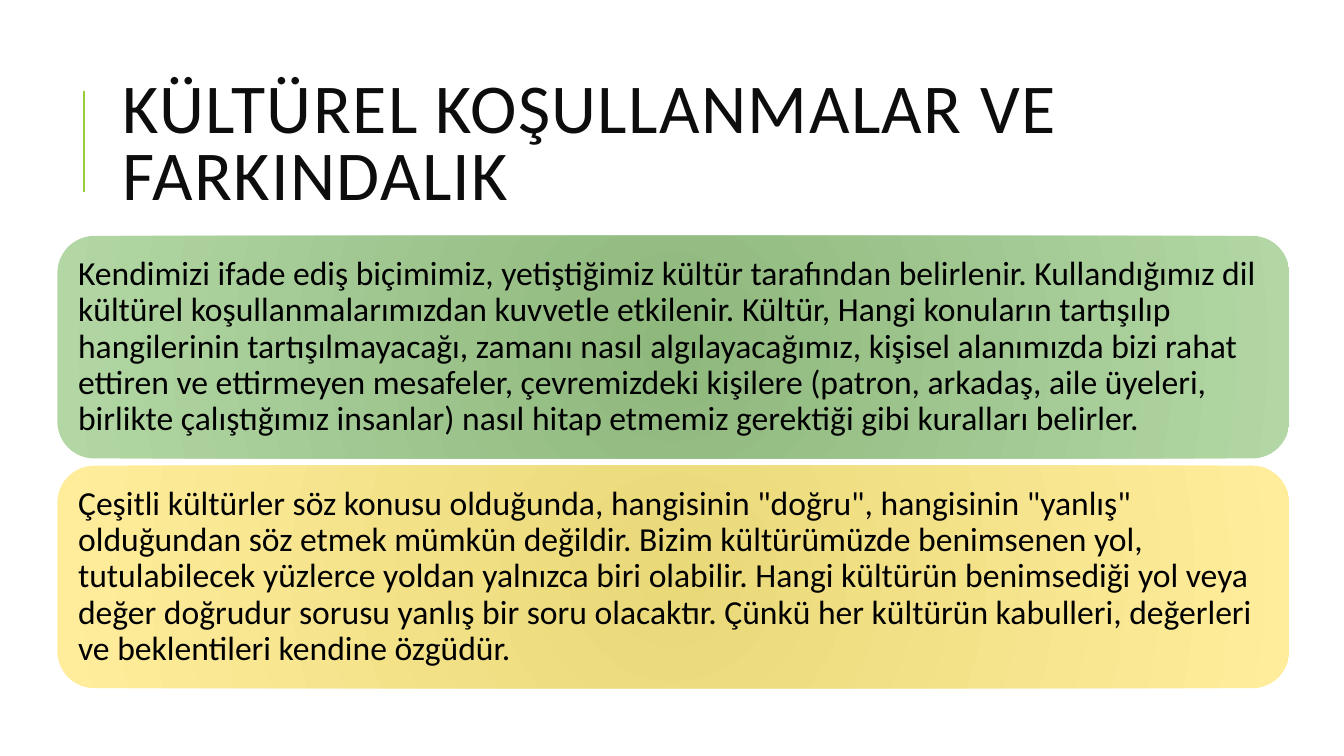
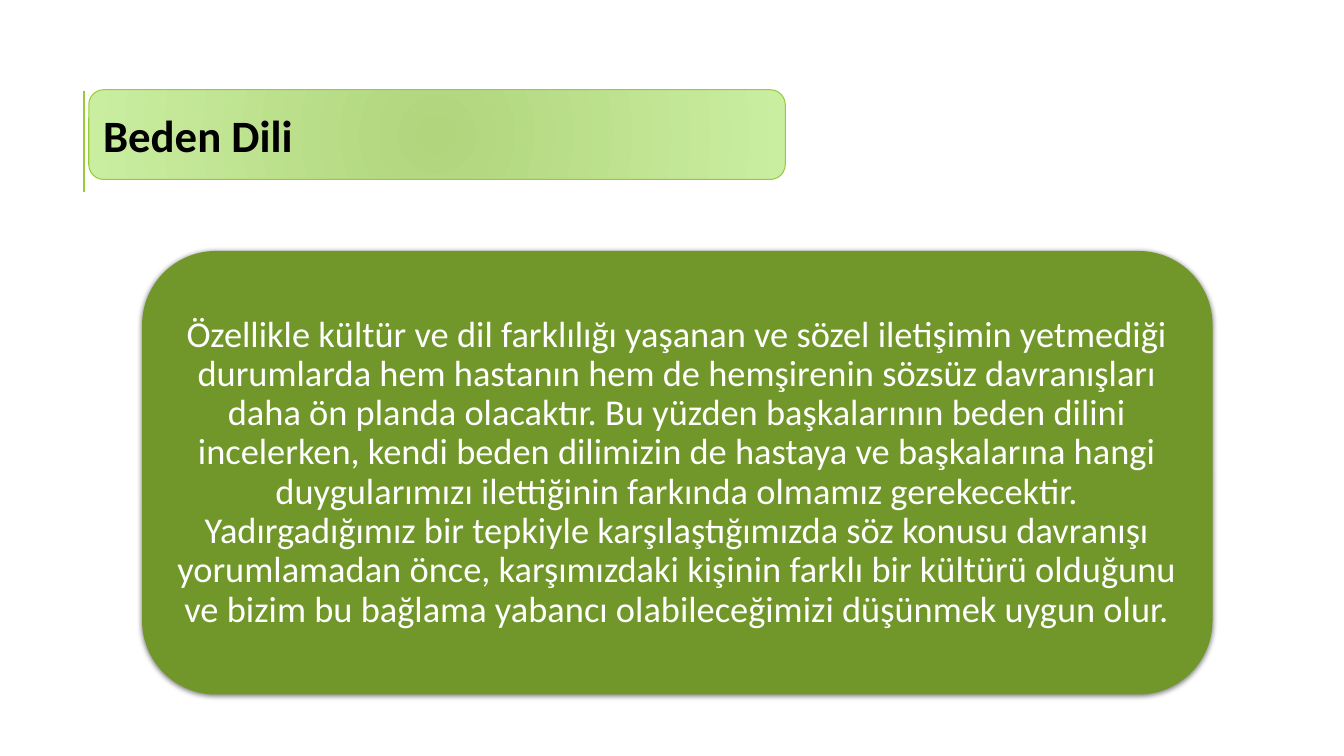
from dataclasses import dataclass
from typing import Optional

from lxml.etree import SubElement
from pptx import Presentation
from pptx.dml.color import RGBColor
from pptx.enum.shapes import MSO_CONNECTOR, MSO_SHAPE
from pptx.enum.text import MSO_ANCHOR, PP_ALIGN
from pptx.oxml.ns import qn
from pptx.slide import Slide
from pptx.text.text import TextFrame
from pptx.util import Pt

FONT = "Calibri"
ACCENT = "99CB38"
TITLE_INK = "0D0D0D"
BLACK = "000000"
WHITE = "FFFFFF"


@dataclass(frozen=True)
class Box:
    left: float
    top: float
    width: float
    height: float

    def lengths(self) -> tuple:
        return Pt(self.left), Pt(self.top), Pt(self.width), Pt(self.height)


@dataclass(frozen=True)
class TextStyle:
    size: float
    color: str
    bold: bool = False
    align: PP_ALIGN = PP_ALIGN.LEFT
    line_spacing: float = 0.9
    letter_spacing: float = 0
    inset_x: float = 7.2
    inset_y: float = 3.6


@dataclass(frozen=True)
class Card:
    box: Box
    text: str
    style: TextStyle
    colors: tuple[str, ...]  # one for a solid fill, two for centre and edge
    outline: Optional[str] = None
    shadow: bool = False


TITLE_BOX = Box(80.6, 46, 765.4, 118)
TITLE_STYLE = TextStyle(50, TITLE_INK, line_spacing=0.8, letter_spacing=1)
CULTURE_STYLE = TextStyle(24, BLACK, inset_y=7.2)
HEADING_STYLE = TextStyle(32, BLACK, bold=True, line_spacing=1)
BODY_STYLE = TextStyle(26, WHITE, align=PP_ALIGN.CENTER, inset_x=7.8)

CULTURE_TOP, CULTURE_HEIGHT, CULTURE_GAP = 168.5, 159, 5.1
CULTURE_CARDS = [
    (
        "Kendimizi ifade ediş biçimimiz, yetiştiğimiz kültür tarafından belirlenir. "
        "Kullandığımız dil kültürel koşullanmalarımızdan kuvvetle etkilenir. Kültür, "
        "Hangi konuların tartışılıp hangilerinin tartışılmayacağı, zamanı nasıl "
        "algılayacağımız, kişisel alanımızda bizi rahat ettiren ve ettirmeyen mesafeler, "
        "çevremizdeki kişilere (patron, arkadaş, aile üyeleri, birlikte çalıştığımız "
        "insanlar) nasıl hitap etmemiz gerektiği gibi kuralları belirler.",
        ("8FB87D", "B2D7A4"),
    ),
    (
        'Çeşitli kültürler söz konusu olduğunda, hangisinin "doğru", hangisinin "yanlış" '
        "olduğundan söz etmek mümkün değildir. Bizim kültürümüzde benimsenen yol, "
        "tutulabilecek yüzlerce yoldan yalnızca biri olabilir. Hangi kültürün benimsediği "
        "yol veya değer doğrudur sorusu yanlış bir soru olacaktır. Çünkü her kültürün "
        "kabulleri, değerleri ve beklentileri kendine özgüdür.",
        ("EAD979", "FFED9C"),
    ),
]

HEADING_CARD = Card(
    Box(63.4, 64.1, 497.5, 64.1), "Beden Dili", HEADING_STYLE,
    ("B0D57D", "CAEEA0"), outline=ACCENT,
)
BODY_CARD = Card(
    Box(101.5, 179.3, 764.6, 316.8),
    "Özellikle kültür ve dil farklılığı yaşanan ve sözel iletişimin yetmediği durumlarda "
    "hem hastanın hem de hemşirenin sözsüz davranışları daha ön planda olacaktır. Bu "
    "yüzden başkalarının beden dilini incelerken, kendi beden dilimizin de hastaya ve "
    "başkalarına hangi duygularımızı ilettiğinin farkında olmamız gerekecektir.\n"
    "Yadırgadığımız bir tepkiyle karşılaştığımızda söz konusu davranışı yorumlamadan önce, "
    "karşımızdaki kişinin farklı bir kültürü olduğunu ve bizim bu bağlama yabancı "
    "olabileceğimizi düşünmek uygun olur.",
    BODY_STYLE, ("719629",), shadow=True,
)


def rgb(color: str) -> RGBColor:
    return RGBColor.from_string(color)


def write_text(frame: TextFrame, text: str, style: TextStyle) -> None:
    frame.word_wrap = True
    frame.vertical_anchor = MSO_ANCHOR.MIDDLE
    frame.margin_left = frame.margin_right = Pt(style.inset_x)
    frame.margin_top = frame.margin_bottom = Pt(style.inset_y)
    paragraph = frame.paragraphs[0]
    paragraph.text = text
    paragraph.alignment = style.align
    paragraph.line_spacing = style.line_spacing
    font = paragraph.font
    font.name, font.size, font.bold = FONT, Pt(style.size), style.bold
    font.color.rgb = rgb(style.color)
    if style.letter_spacing:
        properties = paragraph._p.pPr.find(qn("a:defRPr"))
        properties.set("spc", str(round(style.letter_spacing * 100)))


def fill_radial(shape, colors: tuple[str, ...]) -> None:
    shape.fill.gradient()
    for stop, color, position in zip(shape.fill.gradient_stops, colors, (0, 1)):
        stop.color.rgb = rgb(color)
        stop.position = position
    gradient = shape._element.spPr.find(qn("a:gradFill"))
    gradient.remove(gradient.find(qn("a:lin")))
    circle = SubElement(gradient, qn("a:path"), {"path": "circle"})
    SubElement(circle, qn("a:fillToRect"), dict.fromkeys("ltrb", "100000"))


def add_soft_shadow(shape) -> None:
    effects = shape._element.spPr.find(qn("a:effectLst"))
    shadow = SubElement(effects, qn("a:outerShdw"), {
        "blurRad": str(Pt(4)), "dist": str(Pt(1)), "dir": "5400000", "rotWithShape": "0",
    })
    shade = SubElement(shadow, qn("a:srgbClr"), {"val": BLACK})
    SubElement(shade, qn("a:alpha"), {"val": "50000"})


def add_card(slide: Slide, card: Card) -> None:
    shape = slide.shapes.add_shape(MSO_SHAPE.ROUNDED_RECTANGLE, *card.box.lengths())
    shape.shadow.inherit = False
    if len(card.colors) == 2:
        fill_radial(shape, card.colors)
    else:
        shape.fill.solid()
        shape.fill.fore_color.rgb = rgb(card.colors[0])
    if card.outline:
        shape.line.color.rgb = rgb(card.outline)
        shape.line.width = Pt(0.75)
    else:
        shape.line.fill.background()
    if card.shadow:
        add_soft_shadow(shape)
    write_text(shape.text_frame, card.text, card.style)


def add_base_slide(deck) -> Slide:
    """Add a blank slide with the shared accent rule beside its heading."""
    slide = deck.slides.add_slide(deck.slide_layouts[6])
    rule = slide.shapes.add_connector(
        MSO_CONNECTOR.STRAIGHT, Pt(60), Pt(136.8), Pt(60), Pt(64.8))
    rule.line.color.rgb = rgb(ACCENT)
    rule.line.width = Pt(1.5)
    SubElement(rule._element.spPr, qn("a:effectLst"))
    return slide


def build_culture_slide(deck) -> None:
    slide = add_base_slide(deck)
    title = slide.shapes.add_textbox(*TITLE_BOX.lengths())
    write_text(title.text_frame, "KÜLTÜREL KOŞULLANMALAR VE FARKINDALIK", TITLE_STYLE)
    for index, (text, colors) in enumerate(CULTURE_CARDS):
        top = CULTURE_TOP + index * (CULTURE_HEIGHT + CULTURE_GAP)
        add_card(slide, Card(Box(41, top, 880, CULTURE_HEIGHT), text, CULTURE_STYLE, colors))


def build_body_language_slide(deck) -> None:
    slide = add_base_slide(deck)
    for card in (BODY_CARD, HEADING_CARD):
        add_card(slide, card)


def main() -> None:
    deck = Presentation()
    deck.slide_width, deck.slide_height = Pt(960), Pt(540)
    build_culture_slide(deck)
    build_body_language_slide(deck)
    deck.save("out.pptx")


if __name__ == "__main__":
    main()
